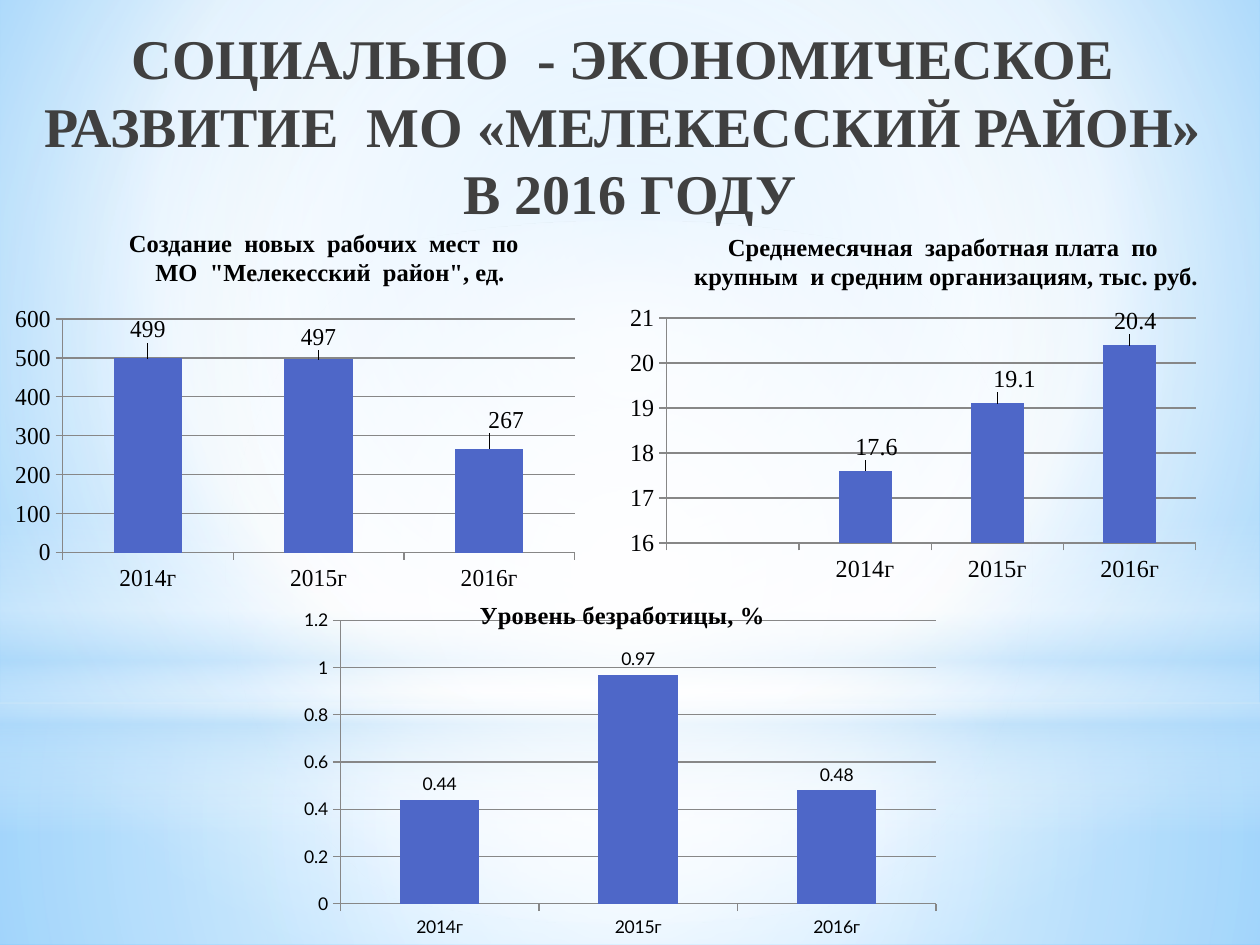
from dataclasses import dataclass
from typing import Optional

from lxml import etree
from pptx import Presentation
from pptx.chart.data import CategoryChartData
from pptx.dml.color import RGBColor
from pptx.enum.chart import XL_CHART_TYPE, XL_LABEL_POSITION, XL_TICK_MARK
from pptx.enum.shapes import MSO_SHAPE
from pptx.enum.text import PP_ALIGN
from pptx.oxml.ns import qn
from pptx.util import Inches, Pt

COLUMNS = XL_CHART_TYPE.COLUMN_CLUSTERED
ABOVE_BAR = XL_LABEL_POSITION.OUTSIDE_END
TICK_OUT = XL_TICK_MARK.OUTSIDE
CENTER = PP_ALIGN.CENTER
RECTANGLE, OVAL = MSO_SHAPE.RECTANGLE, MSO_SHAPE.OVAL
SERIF, SANS = "Times New Roman", "Lato"
BLACK, TITLE_GREY, BAR_BLUE, AXIS_GREY = "000000", "404040", "4E67C8", "878787"
WHITE, SKY = "FFFFFF", "B4DCFA"
WIDTH, HEIGHT = Inches(10), Inches(7.5)
MIDDLE = (50, 50, 50, 50)


@dataclass
class Area:
    """A place on the slide, in percent of its width and height."""
    left: float
    top: float
    width: float
    height: float

    def lengths(self) -> tuple:
        return tuple(int(share * side / 100) for share, side in zip(
            (self.left, self.top, self.width, self.height),
            (WIDTH, HEIGHT, WIDTH, HEIGHT)))


@dataclass
class Glow:
    """A gradient layer; stops are position, colour and opacity in percent."""
    shape: int
    area: Area
    stops: list
    center: Optional[tuple] = MIDDLE


@dataclass
class BarChart:
    area: Area
    plot: tuple
    categories: list
    values: list
    scale: tuple  # minimum, maximum, step
    name: str
    font: str = SERIF
    size: int = 14
    titled: bool = False
    label_shifts: tuple = ()  # point, shift right, shift down


@dataclass
class Caption:
    area: Area
    text: str
    size: int = 14
    color: str = BLACK
    wrap: bool = False


GLOWS = [
    Glow(RECTANGLE, Area(0, 74.4, 100, 25.6),
         [(0, WHITE, 91), (37, WHITE, 76), (100, SKY, 79)]),
    Glow(RECTANGLE, Area(0, 0, 100, 74.4),
         [(0, WHITE, 89), (48, WHITE, 62), (100, SKY, 79)]),
    Glow(RECTANGLE, Area(0, 54.93, 100, 33.33),
         [(0, WHITE, 0), (29, WHITE, 30), (45, SKY, 40),
          (55, WHITE, 26), (65, SKY, 60), (100, WHITE, 0)], None),
    Glow(OVAL, Area(0, 23.33, 100, 74.4), [(0, WHITE, 100), (56, WHITE, 0)]),
]
YEARS = ["2014г", "2015г", "2016г"]
CHARTS = [
    BarChart(Area(1.2, 25.87, 47.2, 36.8), (0.033, 0.217, 0.905, 0.679),
             YEARS, [499, 497, 267], (0, 600, 100), "Рабочие места",
             label_shifts=((0, 0, -0.03), (1, 0, -0.01), (2, 0.03, -0.03))),
    BarChart(Area(23.9, 61.47, 51, 38.8), (0.061, 0.108, 0.927, 0.773),
             YEARS, [0.44, 0.97, 0.48], (0, 1.2, 0.2),
             "Уровень безработицы, %", SANS, 10, True),
    BarChart(Area(50, 31.87, 46.7, 30.4), (0.043, 0.059, 0.918, 0.783),
             [""] + YEARS, [None, 17.6, 19.1, 20.4], (16, 21, 1), "Заработная плата",
             label_shifts=((1, 0.02, -0.02), (2, 0.03, -0.02), (3, 0.01, -0.02))),
]
CAPTIONS = [
    Caption(Area(0, 1.87, 100, 16.67),
            "СОЦИАЛЬНО  - ЭКОНОМИЧЕСКОЕ  РАЗВИТИЕ  МО «МЕЛЕКЕССКИЙ РАЙОН» \nВ 2016 ГОДУ",
            32, TITLE_GREY, True),
    Caption(Area(9.1, 23.47, 34.2, 7.6),
            "Создание  новых  рабочих  мест  по  \nМО  \"Мелекесский  район\", ед."),
    Caption(Area(53.9, 23.87, 42.4, 7.6),
            "Среднемесячная  заработная плата  по \n"
            "крупным  и средним организациям, тыс. руб."),
]


def paint(color_format, color: str) -> None:
    color_format.rgb = RGBColor.from_string(color)


def style_font(font, *, name: str, size: int, color: str = BLACK, bold: bool = False) -> None:
    font.name, font.size, font.bold = name, Pt(size), bold
    paint(font.color, color)


def write_text(frame, text: str, **style) -> None:
    para = frame.paragraphs[0]
    para.text = text
    para.alignment = CENTER
    for span in para.runs:
        style_font(span.font, **style)


def set_gradient(fill, owner, stops: list, center: Optional[tuple]) -> None:
    fill.gradient()
    gradient = next(owner.iter(qn("a:gradFill")))
    for child in list(gradient):
        gradient.remove(child)
    stop_list = etree.SubElement(gradient, qn("a:gsLst"))
    for position, color, opacity in stops:
        stop = etree.SubElement(stop_list, qn("a:gs"), pos=str(position * 1000))
        tone = etree.SubElement(stop, qn("a:srgbClr"), val=color)
        if opacity < 100:
            etree.SubElement(tone, qn("a:alpha"), val=str(opacity * 1000))
    if center is None:
        etree.SubElement(gradient, qn("a:lin"), ang="5400000", scaled="0")
    else:
        circle = etree.SubElement(gradient, qn("a:path"), path="circle")
        etree.SubElement(circle, qn("a:fillToRect"),
                         {side: str(share * 1000) for side, share in zip("ltrb", center)})


def make_layout(**settings):
    layout = etree.Element(qn("c:layout"))
    manual = etree.SubElement(layout, qn("c:manualLayout"))
    for tag, value in settings.items():
        etree.SubElement(manual, qn(f"c:{tag}"), val=str(value))
    return layout


def add_glow(page, glow: Glow) -> None:
    shape = page.shapes.add_shape(glow.shape, *glow.area.lengths())
    shape.shadow.inherit = False
    shape.line.fill.background()
    set_gradient(shape.fill, shape.element, glow.stops, glow.center)


def add_caption(page, caption: Caption) -> None:
    frame = page.shapes.add_textbox(*caption.area.lengths()).text_frame
    frame.word_wrap = caption.wrap
    write_text(frame, caption.text, name=SERIF, size=caption.size,
               color=caption.color, bold=True)


def add_bar_chart(page, item: BarChart) -> None:
    data = CategoryChartData()
    data.categories = item.categories
    data.add_series(item.name, item.values)
    chart = page.shapes.add_chart(COLUMNS, *item.area.lengths(), data).chart
    style_font(chart.font, name=item.font, size=item.size)
    chart.has_legend = False
    chart.has_title = item.titled
    if item.titled:
        write_text(chart.chart_title.text_frame, item.name, name=SERIF, size=14, bold=True)

    # Axes
    value_axis = chart.value_axis
    value_axis.minimum_scale, value_axis.maximum_scale, value_axis.major_unit = item.scale
    value_axis.has_major_gridlines = True
    for axis in (chart.category_axis, value_axis):
        axis.major_tick_mark = TICK_OUT
        paint(axis.format.line.color, AXIS_GREY)
    paint(value_axis.major_gridlines.format.line.color, AXIS_GREY)

    # Bars and their labels
    plot = chart.plots[0]
    plot.gap_width, plot.vary_by_categories = 150, False
    series = plot.series[0]
    series.format.fill.solid()
    paint(series.format.fill.fore_color, BAR_BLUE)
    labels = series.data_labels
    labels.show_value, labels.position = True, ABOVE_BAR
    style_font(labels.font, name=item.font, size=item.size)
    for point, right, down in item.label_shifts:
        label = series.points[point].data_label
        label.position = ABOVE_BAR
        style_font(label.font, name=item.font, size=item.size)
    shifts = {str(point): (right, down) for point, right, down in item.label_shifts}
    for index in chart.element.iter(qn("c:idx")):
        if index.getparent().tag == qn("c:dLbl"):
            right, down = shifts[index.get("val")]
            index.addnext(make_layout(x=right, y=down))

    # Plot area
    area = next(chart.element.iter(qn("c:plotArea")))
    for old in area.findall(qn("c:layout")):
        area.remove(old)
    left, top, width, height = item.plot
    area.insert(0, make_layout(layoutTarget="inner", xMode="edge", yMode="edge",
                               x=left, y=top, w=width, h=height))


def main() -> None:
    deck = Presentation()
    deck.slide_width, deck.slide_height = WIDTH, HEIGHT
    page = deck.slides.add_slide(deck.slide_layouts[6])
    set_gradient(page.background.fill, page.element,
                 [(0, "9ED5FF", 100), (60, WHITE, 100), (100, "5BB9FF", 100)],
                 (20, 10, 20, 60))
    for glow in GLOWS:
        add_glow(page, glow)
    for item in CHARTS:
        add_bar_chart(page, item)
    for caption in CAPTIONS:
        add_caption(page, caption)
    deck.save("out.pptx")


if __name__ == "__main__":
    main()
